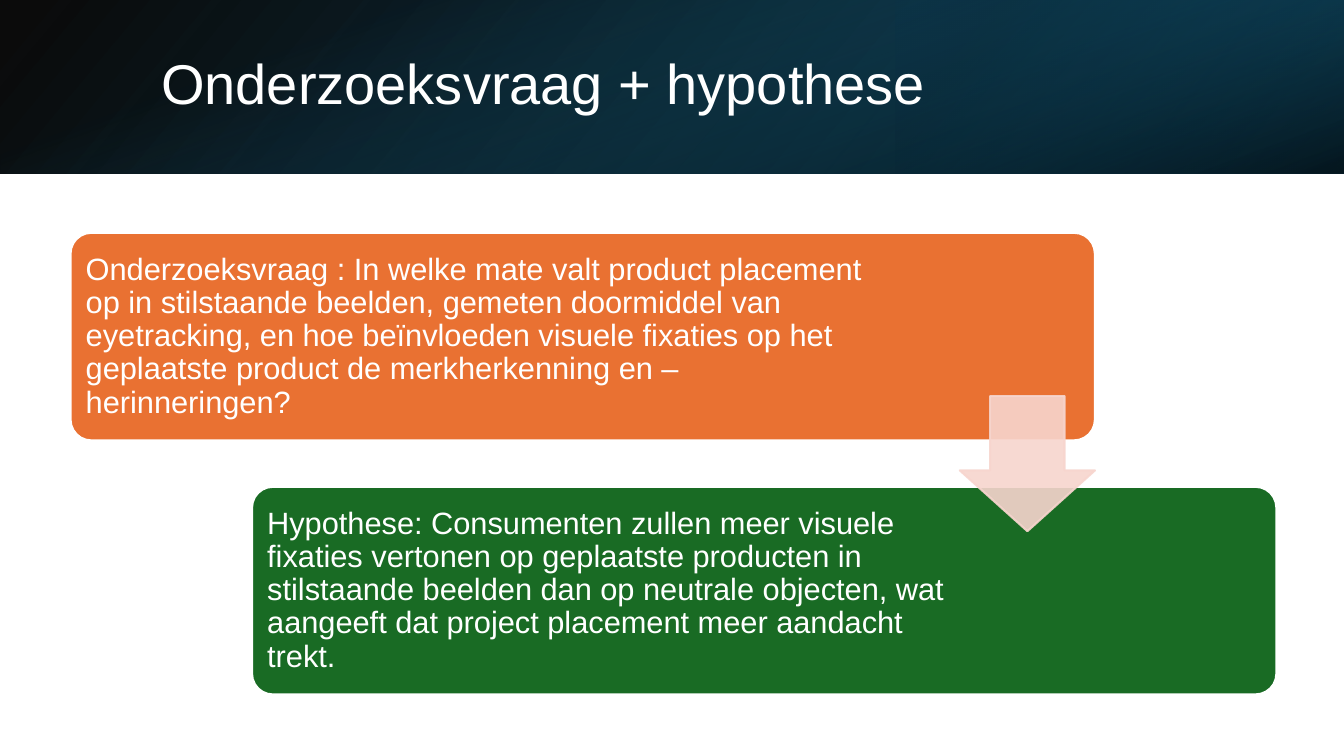
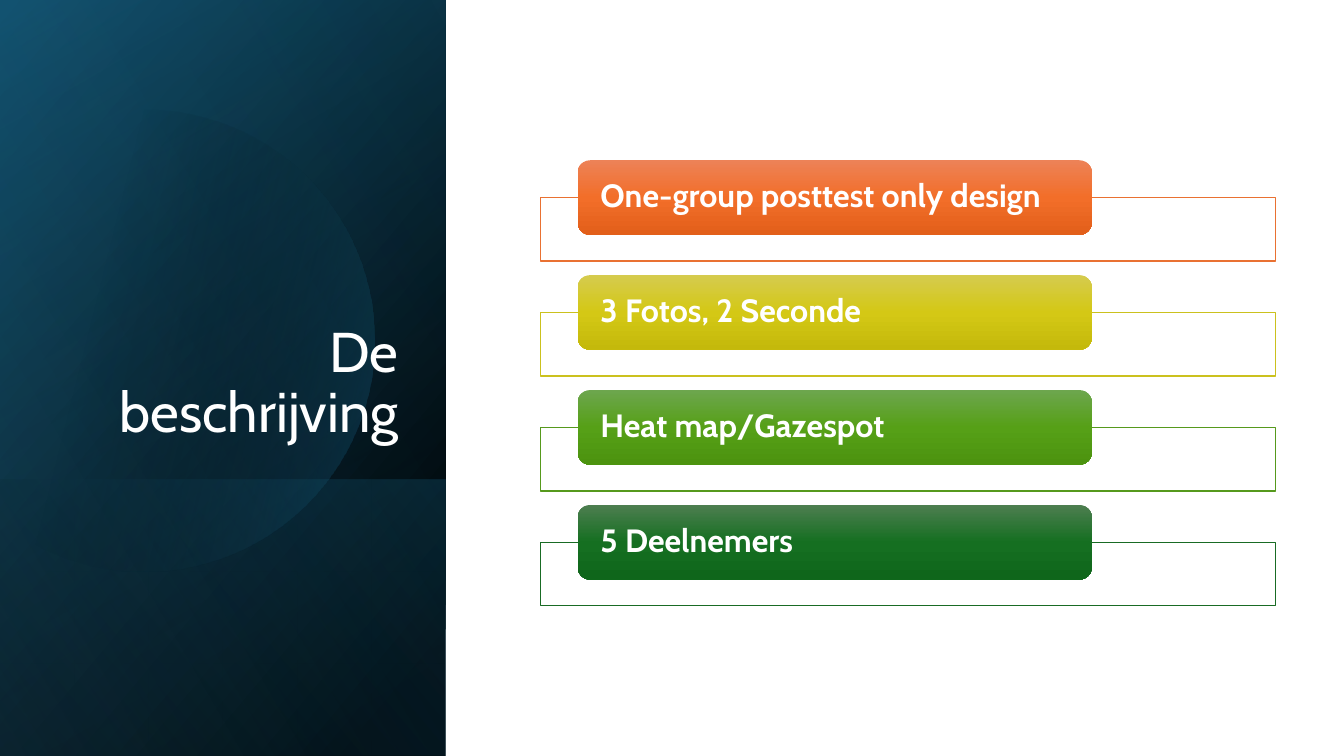
from math import acos, cos, sin

from lxml.etree import SubElement
from pptx import Presentation
from pptx.dml.color import RGBColor
from pptx.enum.shapes import MSO_SHAPE
from pptx.enum.text import MSO_ANCHOR, PP_ALIGN
from pptx.oxml.ns import qn
from pptx.util import Inches, Pt

WHITE = RGBColor(0xFF, 0xFF, 0xFF)
BLACK = RGBColor(0x00, 0x00, 0x00)
NAVY = RGBColor(0x0B, 0x30, 0x41)
DEEP = RGBColor(0x10, 0x48, 0x62)
TEAL = RGBColor(0x15, 0x60, 0x82)
SKY = RGBColor(0x46, 0xB1, 0xE1)
ORANGE = RGBColor(0xE9, 0x71, 0x32)
YELLOW = RGBColor(0xCB, 0xC1, 0x1E)
LIME = RGBColor(0x56, 0x99, 0x1D)
GREEN = RGBColor(0x19, 0x6B, 0x24)
PINK = RGBColor(0xF7, 0xD5, 0xCE)

WIDE, HIGH = 13.33, 7.5
BAND = 1.72
SIDE = 4.42
TITLE = {"size": Pt(40), "bold": False}
BODY = {"size": Pt(22), "name": "Arial", "bold": False}
CARD = {"size": Pt(23), "name": "Cabin", "bold": True}

STEPS = [
    ("Onderzoeksvraag : In welke mate valt product placement op in stilstaande "
     "beelden, gemeten doormiddel van eyetracking, en hoe beïnvloeden visuele "
     "fixaties op het geplaatste product de merkherkenning en –herinneringen?",
     ORANGE, 2.1),
    ("Hypothese: Consumenten zullen meer visuele fixaties vertonen op geplaatste "
     "producten in stilstaande beelden dan op neutrale objecten, wat aangeeft dat "
     "project placement meer aandacht trekt.",
     GREEN, 3.23),
]
CARDS = [
    ("One-group posttest only design", ORANGE, ("ED8257", "F26E29", "E25F1A")),
    ("3 Fotos, 2 Seconde", YELLOW, ("D5CB4E", "D4C815", "C4B90B")),
    ("Heat map/Gazespot", LIME, ("6DA64E", "56A017", "4C930F")),
    ("5 Deelnemers", GREEN, ("4D7E50", "156F21", "0F661B")),
]


def put(item, values):
    for key, value in values.items():
        setattr(item, key, value)


def fade(color, alpha):
    SubElement(color, qn("a:alpha"), val=str(alpha * 1000))


def blend(shape, stops, angle):
    shape.fill.gradient()
    shape.fill.gradient_angle = 360 - angle
    ramp = next(shape._element.spPr.iter(qn("a:gsLst")))
    ramp.clear()
    for place, color, alpha in stops:
        stop = SubElement(ramp, qn("a:gs"), pos=str(place * 1000))
        fade(SubElement(stop, qn("a:srgbClr"), val=str(color)), alpha)


def block(slide, kind, box, fill=None, line=None, width=1.5):
    shape = slide.shapes.add_shape(kind, *map(Inches, box))
    shape.shadow.inherit = False
    if fill is not None:
        shape.fill.solid()
        shape.fill.fore_color.rgb = fill
    if line is None:
        shape.line.fill.background()
    else:
        put(shape.line, {"width": Pt(width)})
        shape.line.color.rgb = line
    return shape


def panel(slide, box, stops, angle, turn=0, flip=True):
    left, top, width, height = box
    if turn == 90:
        shift = (width - height) / 2
        box = left + shift, top - shift, height, width
    shape = block(slide, MSO_SHAPE.RECTANGLE, box)
    shape.rotation = turn
    if flip:
        shape._element.spPr.find(qn("a:xfrm")).set("flipH", "1")
    blend(shape, stops, angle)


def disc(slide, mid_x, mid_y, radius, stops, angle):
    end = acos(-mid_x / radius)
    turns = [end * (step / 40 - 1) for step in range(81)]
    points = [(Inches(mid_x + radius * cos(turn)),
               Inches(mid_y + radius * sin(turn))) for turn in turns]
    draft = slide.shapes.build_freeform(*points[0])
    draft.add_line_segments(points[1:])
    shape = draft.convert_to_shape()
    shape.shadow.inherit = False
    shape.line.fill.background()
    blend(shape, stops, angle)


def write(shape, text, font, frame, align=PP_ALIGN.LEFT):
    put(shape.text_frame, {"word_wrap": True, **frame})
    para = shape.text_frame.paragraphs[0]
    put(para, {"text": text, "alignment": align, "line_spacing": 0.9})
    put(para.runs[0].font, font)
    para.runs[0].font.color.rgb = WHITE


def title(slide, text, box, face, anchor, align):
    shape = slide.shapes.add_textbox(*map(Inches, box))
    write(shape, text, {**TITLE, "name": face},
          {"vertical_anchor": anchor}, align)


def pads(left, top, right, low):
    return {"vertical_anchor": MSO_ANCHOR.MIDDLE,
            "margin_left": Inches(left), "margin_top": Inches(top),
            "margin_right": Inches(right), "margin_bottom": Inches(low)}


def thesis(slide):
    band = 0, 0, WIDE, BAND
    panel(slide, band, [(0, BLACK, 96), (100, DEEP, 100)], 140)
    panel(slide, (WIDE * 2 / 3, 0, WIDE / 3, BAND),
          [(19, NAVY, 68), (100, TEAL, 79)], 320, 180)
    panel(slide, band, [(23, TEAL, 0), (99, BLACK, 74)], 340, 90, False)
    title(slide, "Onderzoeksvraag + hypothese", (1.5, 0.38, 10.98, 0.96),
          "Arial", MSO_ANCHOR.MIDDLE, PP_ALIGN.LEFT)
    for row, (text, color, right) in enumerate(STEPS):
        box = 0.7 + 1.8 * row, 2.31 + 2.52 * row, 10.16, 2.06
        shape = block(slide, MSO_SHAPE.ROUNDED_RECTANGLE, box, color, WHITE)
        shape.adjustments[0] = 0.1
        write(shape, text, BODY, pads(0.09, 0.09, right, 0.09))
    arrow = block(slide, MSO_SHAPE.DOWN_ARROW, (9.52, 3.93, 1.34, 1.34), PINK, PINK)
    arrow.adjustments[0] = 0.55
    arrow.adjustments[1] = 0.45
    for color in arrow._element.spPr.iter(qn("a:srgbClr")):
        fade(color, 90)


def design(slide):
    side = 0, 0, SIDE, HIGH
    panel(slide, side, [(8, BLACK, 100), (100, DEEP, 100)], 50, 90)
    panel(slide, side, [(0, BLACK, 0), (99, TEAL, 46)], 30, 90)
    panel(slide, (0, 4.76, SIDE, 2.74), [(2, TEAL, 29), (100, BLACK, 30)], 130, 90)
    disc(slide, 1.42, 3.38, 2.29, [(29, BLACK, 0), (100, TEAL, 43)], 14)
    panel(slide, side, [(0, BLACK, 0), (99, SKY, 11)], 120, 90)
    title(slide, "De beschrijving", (0.64, 1.84, 3.41, 2.62),
          "Cabin", MSO_ANCHOR.BOTTOM, PP_ALIGN.RIGHT)
    for row, (text, color, shades) in enumerate(CARDS):
        top = 1.59 + 1.14 * row
        block(slide, MSO_SHAPE.RECTANGLE, (5.36, top + 0.37, 7.29, 0.63),
              WHITE, color, 1)
        card = block(slide, MSO_SHAPE.ROUNDED_RECTANGLE, (5.73, top, 5.1, 0.74))
        blend(card, [(50 * step, shade, 100) for step, shade in enumerate(shades)], 90)
        write(card, text, CARD, pads(0.19, 0, 0.19, 0))


def main():
    deck = Presentation()
    put(deck, {"slide_width": Inches(WIDE), "slide_height": Inches(HIGH)})
    for draw in (thesis, design):
        draw(deck.slides.add_slide(deck.slide_layouts[6]))
    deck.save("out.pptx")


if __name__ == "__main__":
    main()
